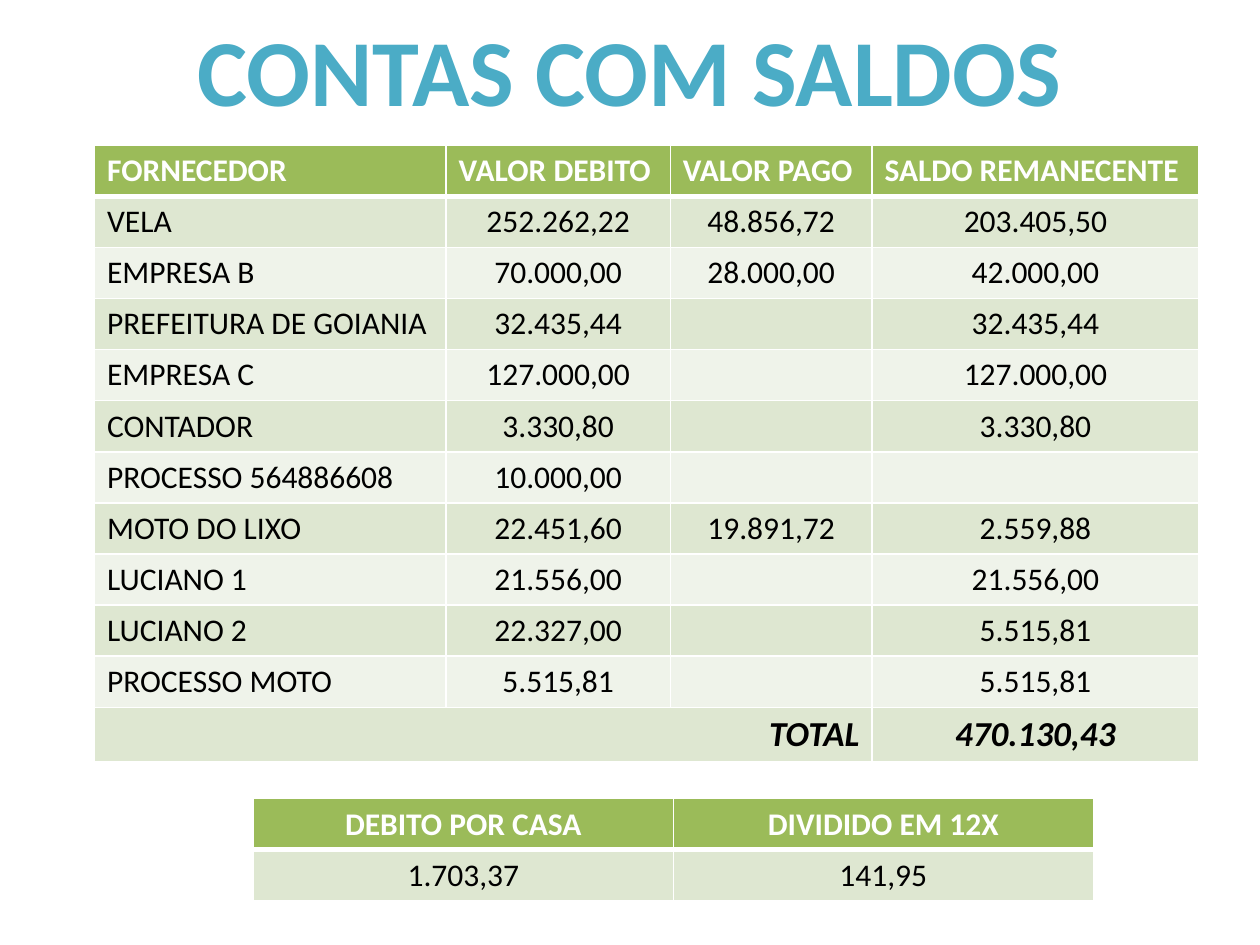
from dataclasses import dataclass

from lxml.etree import SubElement
from pptx import Presentation
from pptx.dml.color import RGBColor
from pptx.enum.text import MSO_ANCHOR, MSO_AUTO_SIZE, PP_ALIGN
from pptx.oxml import parse_xml
from pptx.oxml.ns import nsdecls, qn
from pptx.util import Pt


@dataclass(frozen=True)
class Theme:
    """Colours, typeface and type sizes of the slide."""
    font: str = "Calibri"
    title: str = "4BACC6"
    header: str = "9BBB59"
    bands: tuple = ("DEE7D1", "EFF3EA")
    light: str = "FFFFFF"
    dark: str = "000000"
    title_size: float = 54
    body_size: float = 18
    total_size: float = 20
    thin: float = 1
    thick: float = 3
    outline: float = 0.75


@dataclass(frozen=True)
class Box:
    """A region of the slide, in points."""
    left: float
    top: float
    width: float
    height: float

    def lengths(self):
        """Return the four lengths for an add method."""
        return Pt(self.left), Pt(self.top), Pt(self.width), Pt(self.height)


THEME = Theme()
ROW_HEIGHT = 29.2
LEFT, CENTER, RIGHT = PP_ALIGN.LEFT, PP_ALIGN.CENTER, PP_ALIGN.RIGHT

ACCOUNTS = [
    ("FORNECEDOR", "VALOR DEBITO", "VALOR PAGO", "SALDO REMANECENTE"),
    ("VELA", "252.262,22", "48.856,72", "203.405,50"),
    ("EMPRESA B", "70.000,00", "28.000,00", "42.000,00"),
    ("PREFEITURA DE GOIANIA", "32.435,44", "", "32.435,44"),
    ("EMPRESA C", "127.000,00", "", "127.000,00"),
    ("CONTADOR", "3.330,80", "", "3.330,80"),
    ("PROCESSO 564886608", "10.000,00", "", ""),
    ("MOTO DO LIXO", "22.451,60", "19.891,72", "2.559,88"),
    ("LUCIANO 1", "21.556,00", "", "21.556,00"),
    ("LUCIANO 2", "22.327,00", "", "5.515,81"),
    ("PROCESSO MOTO", "5.515,81", "", "5.515,81"),
    ("TOTAL", "", "", "470.130,43"),
]
INSTALMENTS = [
    ("DEBITO POR CASA", "DIVIDIDO EM 12X"),
    ("1.703,37", "141,95"),
]


def add_run(paragraph, text, size, color, bold=False, italic=False):
    """Add one formatted run and return it."""
    run = paragraph.add_run()
    run.text = text
    run.font.name = THEME.font
    run.font.size = Pt(size)
    run.font.bold = bold
    run.font.italic = italic
    run.font.color.rgb = RGBColor.from_string(color)
    return run


def add_line_fill(line, color):
    """Give a line element a solid colour."""
    fill = SubElement(line, qn("a:solidFill"))
    SubElement(fill, qn("a:srgbClr"), val=color)


def set_borders(cell, top, bottom):
    """Draw the four cell borders, the side ones thin."""
    properties = cell._tc.get_or_add_tcPr()
    widths = {"lnL": THEME.thin, "lnR": THEME.thin, "lnT": top, "lnB": bottom}
    for index, (name, width) in enumerate(widths.items()):
        line = parse_xml(f'<a:{name} {nsdecls("a")} w="{Pt(width)}"/>')
        add_line_fill(line, THEME.light)
        properties.insert(index, line)


def format_cell(cell, row_index):
    """Fill a cell by its row and draw its borders."""
    color = THEME.bands[(row_index - 1) % 2] if row_index else THEME.header
    cell.fill.solid()
    cell.fill.fore_color.rgb = RGBColor.from_string(color)
    set_borders(cell,
                THEME.thick if row_index == 1 else THEME.thin,
                THEME.thick if row_index == 0 else THEME.thin)


def add_table(slide, box, rows, widths, header_alignments, alignments, has_total=False):
    """Place a banded table with a header row and an optional total row."""
    table = slide.shapes.add_table(len(rows), len(widths), *box.lengths()).table
    table.first_row = table.horz_banding = False
    for column, width in zip(table.columns, widths):
        column.width = Pt(width)
    for row_index, texts in enumerate(rows):
        is_header = row_index == 0
        is_total = has_total and row_index == len(rows) - 1
        table.rows[row_index].height = Pt(
            box.height - ROW_HEIGHT * row_index if is_total else ROW_HEIGHT)
        row_alignments = header_alignments if is_header else alignments
        if is_total:
            row_alignments = (RIGHT, *alignments[1:])
        for column_index, text in enumerate(texts):
            cell = table.cell(row_index, column_index)
            format_cell(cell, row_index)
            paragraph = cell.text_frame.paragraphs[0]
            paragraph.alignment = row_alignments[column_index]
            if text:
                add_run(paragraph, text,
                        THEME.total_size if is_total else THEME.body_size,
                        THEME.light if is_header else THEME.dark,
                        bold=is_header or is_total, italic=is_total)
        if is_total:
            table.cell(row_index, 0).merge(table.cell(row_index, len(widths) - 2))


def add_title(slide, box, text):
    """Place the outlined title in its placeholder."""
    title = slide.shapes.title
    title.left, title.top, title.width, title.height = box.lengths()
    frame = title.text_frame
    frame.word_wrap = False
    frame.auto_size = MSO_AUTO_SIZE.SHAPE_TO_FIT_TEXT
    frame.vertical_anchor = MSO_ANCHOR.TOP
    paragraph = frame.paragraphs[0]
    paragraph.alignment = CENTER
    run = add_run(paragraph, text, THEME.title_size, THEME.title, bold=True)
    line = parse_xml(f'<a:ln {nsdecls("a")} w="{Pt(THEME.outline)}"/>')
    add_line_fill(line, THEME.light)
    run._r.get_or_add_rPr().insert(0, line)


def main():
    """Build and save the slide."""
    presentation = Presentation()
    presentation.slide_width, presentation.slide_height = Pt(720), Pt(540)
    slide = presentation.slides.add_slide(presentation.slide_layouts.get_by_name("Title Only"))
    add_title(slide, Box(103, 3, 513.4, 73), "CONTAS COM SALDOS")
    add_table(slide, Box(54, 83, 631.2, 352.4), ACCOUNTS, (200.9, 128.2, 115.2, 186.9),
              (LEFT,) * 4, (LEFT, CENTER, CENTER, CENTER), has_total=True)
    add_table(slide, Box(144.8, 456.4, 480, 2 * ROW_HEIGHT), INSTALMENTS, (240, 240),
              (CENTER,) * 2, (CENTER,) * 2)
    presentation.save("out.pptx")


if __name__ == "__main__":
    main()
